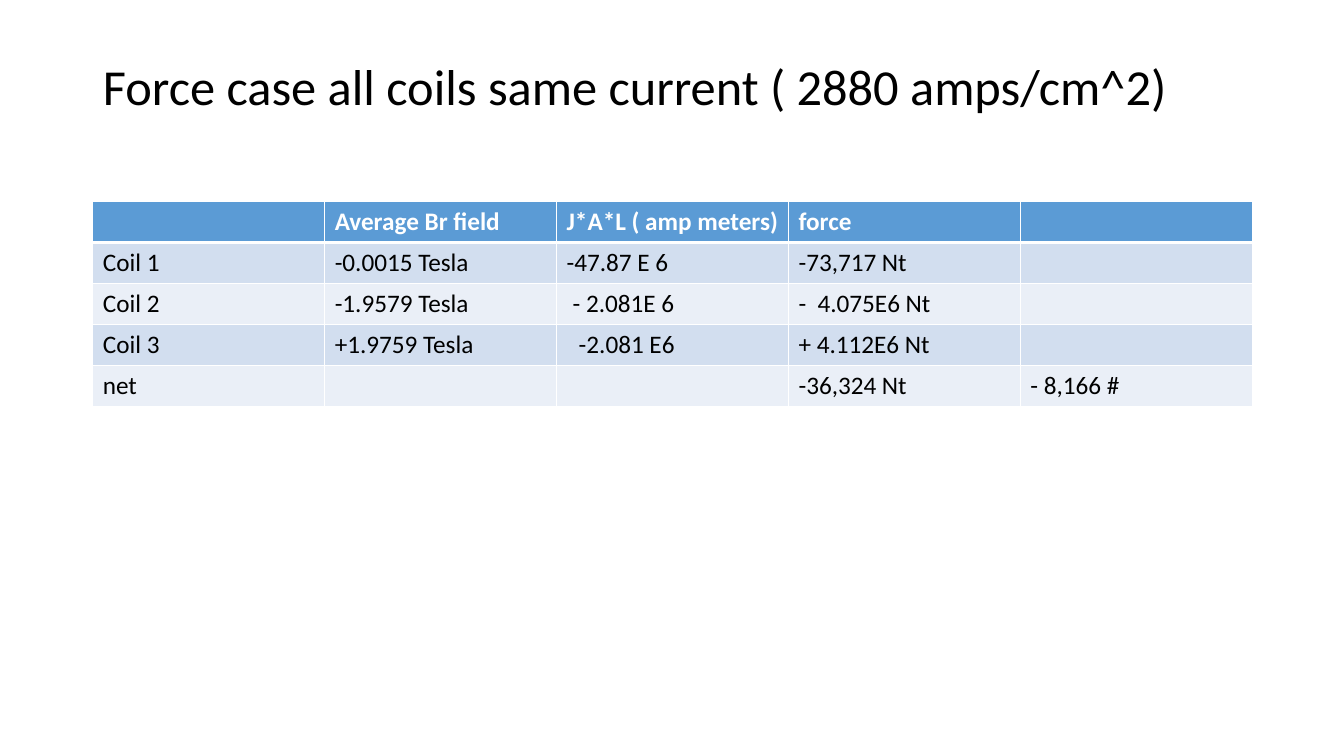
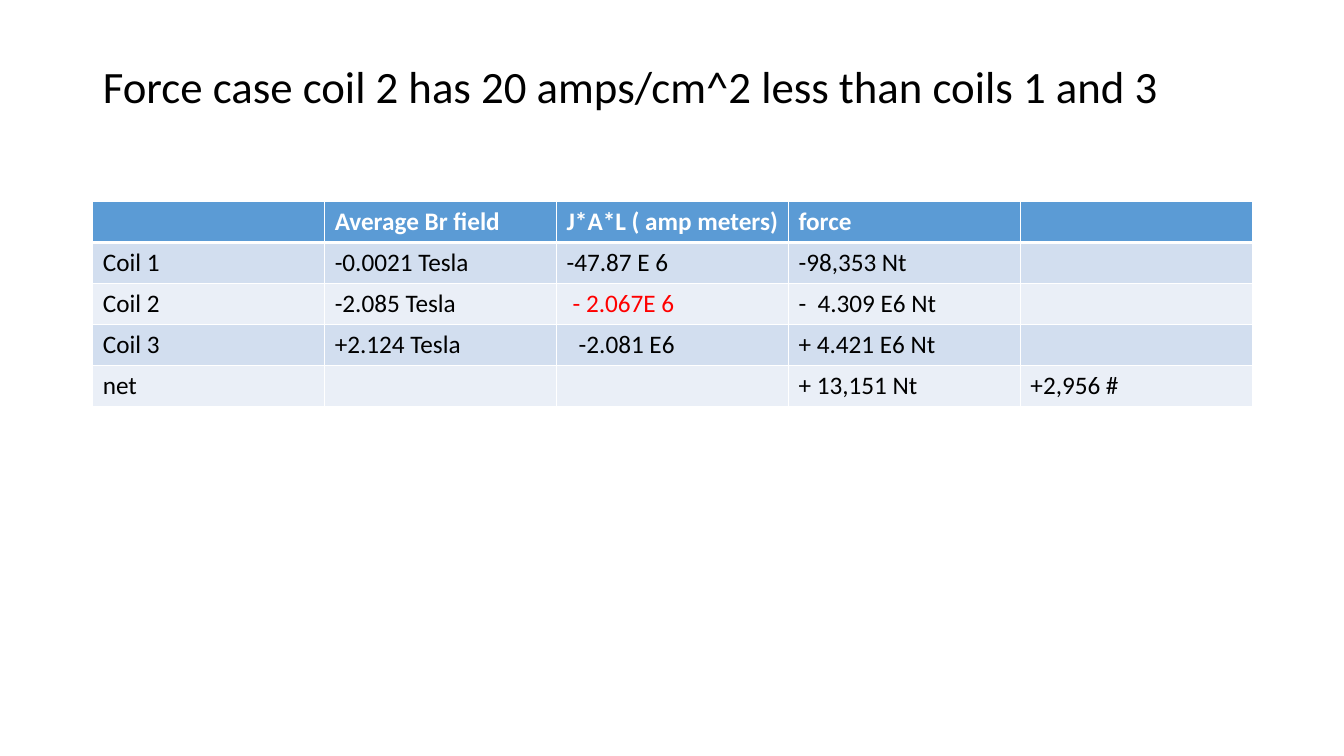
from lxml.etree import SubElement as Sub
from pptx import Presentation as Deck
from pptx.dml.color import RGBColor as Rgb
from pptx.enum.text import MSO_ANCHOR as Anchor, MSO_AUTO_SIZE as Fit, PP_ALIGN as Align
from pptx.oxml.ns import qn
from pptx.util import Emu, Pt

FONT = "Calibri"
WHITE, BLACK, RED = "FFFFFF", "000000", "FF0000"
BLUE, BANDS = "5B9BD5", ("EAEFF7", "D2DEEF")
HEAD = ("", "Average Br field", "J*A*L ( amp meters)", "force", "")
INSET = {(2, 2): 6, (3, 2): 12}
CASES = (
    ("Force case all coils same current ( 2880 amps/cm^2)", 36, (
        ("Coil 1", "-0.0015 Tesla", "-47.87 E 6", "-73,717 Nt", ""),
        ("Coil 2", "-1.9579 Tesla", "- 2.081E 6", "-  4.075E6 Nt", ""),
        ("Coil 3", "+1.9759 Tesla", "-2.081 E6", "+ 4.112E6 Nt", ""),
        ("net", "", "", "-36,324 Nt", "- 8,166 #"),
    ), ()),
    ("Force case coil 2 has 20 amps/cm^2 less than coils 1 and 3", 32, (
        ("Coil 1", "-0.0021 Tesla", "-47.87 E 6", "-98,353 Nt", ""),
        ("Coil 2", "-2.085 Tesla", "- 2.067E 6", "-  4.309 E6 Nt", ""),
        ("Coil 3", "+2.124 Tesla", "-2.081 E6", "+ 4.421 E6 Nt", ""),
        ("net", "", "", "+ 13,151 Nt", "+2,956 #"),
    ), ((2, 2),)),
)


def px(num):
    """Turn px, 100 to the inch, into EMU."""
    return Emu(num * 9144)


def tint(code):
    """Turn a hex string into a colour."""
    return Rgb.from_string(code)


def add_run(para, text, size, color, bold=False):
    """Add one styled run to a paragraph."""
    run = para.add_run()
    run.text = text
    font = run.font
    font.name, font.size, font.bold = FONT, Pt(size), bold
    font.color.rgb = tint(color)


def add_title(slide, text, size):
    """Place and fill the title placeholder."""
    title = slide.shapes.title
    title.left, title.top, title.width, title.height = map(px, (92, 40, 1150, 97))
    frame = title.text_frame
    frame.word_wrap, frame.auto_size = True, Fit.NONE
    frame.vertical_anchor = Anchor.MIDDLE
    para = frame.paragraphs[0]
    para.alignment, para.line_spacing = Align.LEFT, 0.9
    add_run(para, text, size, BLACK)


def add_edges(cell, row):
    """Draw white cell borders, thick under the header."""
    props = cell._tc.get_or_add_tcPr()
    thick = {"T": 1, "B": 0}
    for side in "LRTB":
        width = 3 if thick.get(side) == row else 1
        line = Sub(props, qn("a:ln" + side), w=str(Pt(width)))
        fill = Sub(line, qn("a:solidFill"))
        Sub(fill, qn("a:srgbClr"), val=WHITE)


def add_grid(slide, rows, hot):
    """Add the force table, with the hot cells in red."""
    rows = (HEAD, *rows)
    box = map(px, (92, 200, 1150, 203))
    table = slide.shapes.add_table(len(rows), len(HEAD), *box).table
    for row, texts in enumerate(rows):
        for col, text in enumerate(texts):
            cell = table.cell(row, col)
            add_edges(cell, row)
            cell.fill.solid()
            cell.fill.fore_color.rgb = tint(BANDS[row % 2] if row else BLUE)
            cell.margin_left = px(10 + INSET.get((row, col), 0))
            if text:
                color = RED if (row, col) in hot else BLACK if row else WHITE
                add_run(cell.text_frame.paragraphs[0], text, 18, color, row == 0)


def main():
    """Build and save the deck."""
    deck = Deck()
    deck.slide_width, deck.slide_height = px(1333), px(750)
    for title, size, rows, hot in CASES:
        slide = deck.slides.add_slide(deck.slide_layouts[5])
        add_title(slide, title, size)
        add_grid(slide, rows, hot)
    deck.save("out.pptx")


if __name__ == "__main__":
    main()
